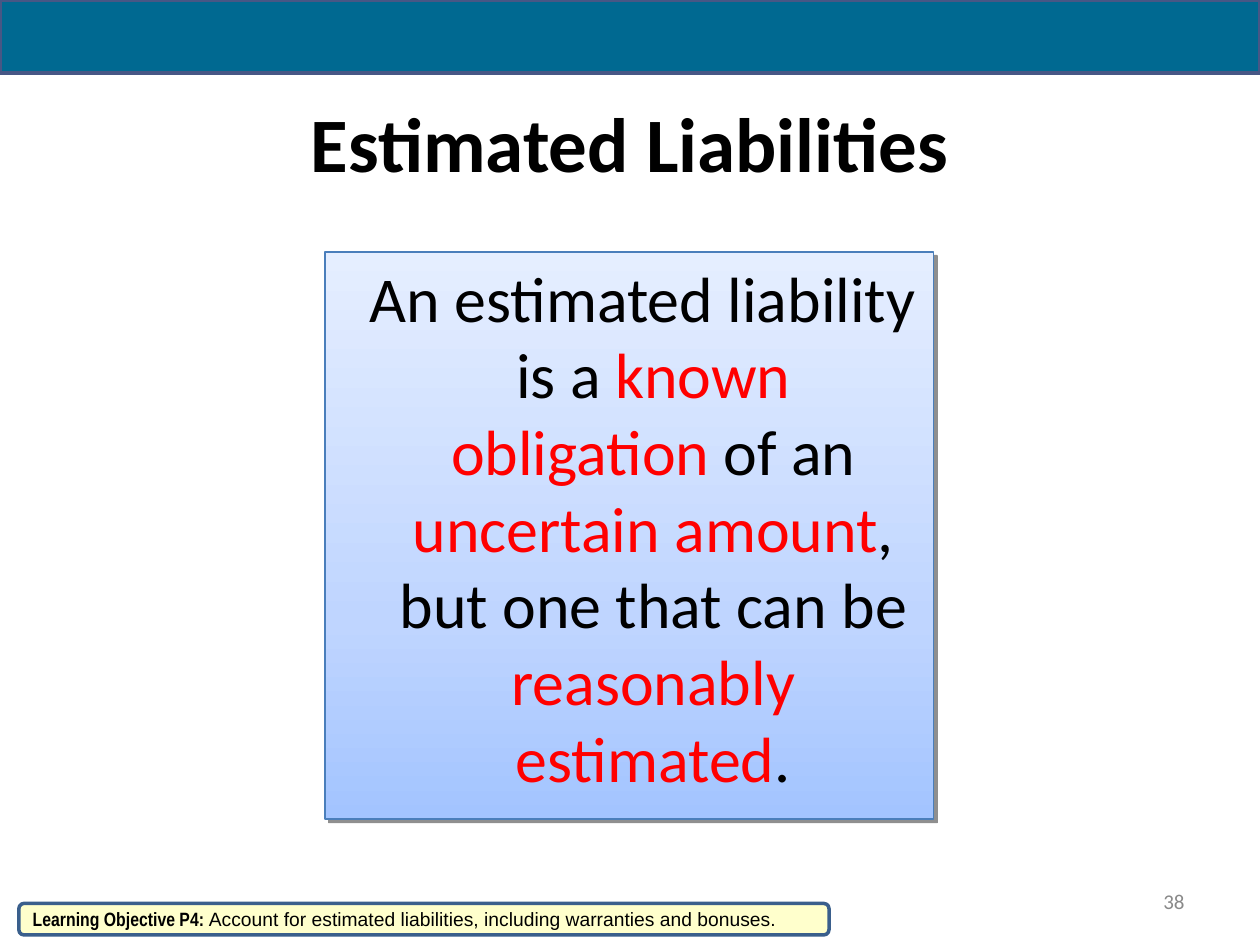
from pptx import Presentation
from pptx.dml.color import RGBColor
from pptx.enum.shapes import MSO_SHAPE as SHAPE
from pptx.enum.text import MSO_ANCHOR as ANCHOR, PP_ALIGN as ALIGN
from pptx.oxml import parse_xml
from pptx.oxml.ns import nsdecls
from pptx.util import Inches, Pt

BLACK = RGBColor(0x00, 0x00, 0x00)
RED = RGBColor(0xFF, 0x00, 0x00)
GRAY = RGBColor(0x89, 0x89, 0x89)
TEAL = RGBColor(0x00, 0x69, 0x91)
BAR_EDGE = RGBColor(0x47, 0x57, 0x85)
CREAM = RGBColor(0xFF, 0xFF, 0xCC)
NOTE_EDGE = RGBColor(0x3A, 0x5F, 0x8C)
BOX_EDGE = RGBColor(0x4A, 0x7E, 0xBB)
BOX_STOPS = [(0, "E5EEFF"), (65, "BFD5FF"), (100, "A3C4FF")]

# Content: each text is a list of (words, font format)
TITLE = [("Estimated Liabilities", dict(name="Calibri", size=Pt(44), bold=True))]
DEFINITION = [
    (words, dict(name="Calibri", size=Pt(36.5)), color)
    for words, color in [
        ("An estimated liability is a ", BLACK),
        ("known obligation", RED),
        (" of an ", BLACK),
        ("uncertain amount", RED),
        (", but one that can be ", BLACK),
        ("reasonably estimated", RED),
        (".", BLACK),
    ]
]
PAGE = [("38", dict(name="Calibri", size=Pt(12)), GRAY)]
OBJECTIVE = [
    ("Learning Objective P4: ", dict(name="Arial Narrow", size=Pt(11), bold=True)),
    ("Account for estimated liabilities, including warranties and bonuses.",
     dict(name="Arial", size=Pt(11), bold=False)),
]

prs = Presentation()
prs.slide_width, prs.slide_height = Inches(10), Inches(7.5)
s = prs.slides.add_slide(prs.slide_layouts[6])


def add_box(kind, box, edge, width, fill=None):
    sp = s.shapes.add_shape(kind, *map(Inches, box))
    sp.shadow.inherit = False
    if fill is not None:
        sp.fill.solid()
        sp.fill.fore_color.rgb = fill
    sp.line.color.rgb = edge
    sp.line.width = Pt(width)
    return sp


def add_label(box):
    return s.shapes.add_textbox(*map(Inches, box))


def write(sp, runs, align, anchor=ANCHOR.MIDDLE):
    tf = sp.text_frame
    tf.word_wrap = True
    tf.vertical_anchor = anchor
    p = tf.paragraphs[0]
    p.alignment = align
    for words, fmt, *color in runs:
        r = p.add_run()
        r.text = words
        for key, value in fmt.items():
            setattr(r.font, key, value)
        r.font.color.rgb = color[0] if color else BLACK
    return p


# Title
write(add_label((0.5, 0.5, 9, 1.25)), TITLE, ALIGN.CENTER)

# Definition box with gradient, shadow and hanging indent
box = add_box(SHAPE.RECTANGLE, (2.58, 2, 4.83, 4.5), BOX_EDGE, 0.75)
stops = "".join(
    f'<a:gs pos="{pos * 1000}"><a:srgbClr val="{color}"/></a:gs>'
    for pos, color in BOX_STOPS)
box_pr = box.element.spPr
box_pr.find("{*}prstGeom").addnext(parse_xml(
    f'<a:gradFill {nsdecls("a")} rotWithShape="1"><a:gsLst>{stops}</a:gsLst>'
    '<a:lin ang="5400000" scaled="0"/></a:gradFill>'))
box_pr.find("{*}effectLst").append(parse_xml(
    f'<a:outerShdw {nsdecls("a")} blurRad="0" dist="{Pt(3)}" dir="2700000">'
    '<a:srgbClr val="000000"><a:alpha val="43000"/></a:srgbClr></a:outerShdw>'))
p = write(box, DEFINITION, ALIGN.CENTER, ANCHOR.TOP)
pPr = p._p.get_or_add_pPr()
pPr.set("marL", str(Inches(0.38)))
pPr.set("indent", str(Inches(-0.17)))

# Top bar
add_box(SHAPE.RECTANGLE, (0, 0, 10, 0.58), BAR_EDGE, 2.25, TEAL)

# Page number
write(add_label((7.17, 6.95, 2.33, 0.4)), PAGE, ALIGN.RIGHT)

# Learning objective
note = add_box(SHAPE.ROUNDED_RECTANGLE, (0.15, 7.17, 6.43, 0.25), NOTE_EDGE, 2, CREAM)
write(note, OBJECTIVE, ALIGN.LEFT)

prs.save("out.pptx")
